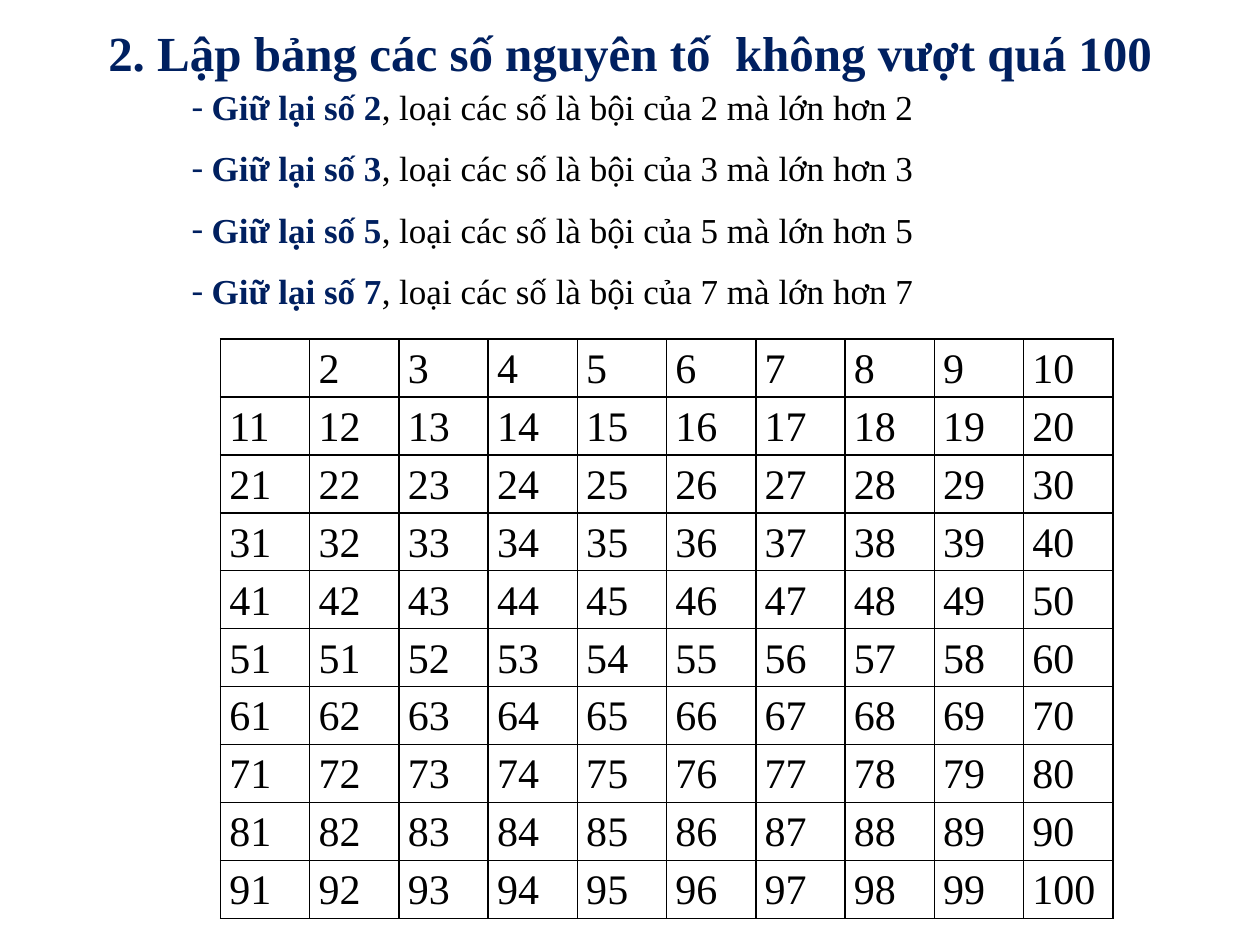
from lxml.etree import SubElement
from pptx import Presentation
from pptx.dml.color import RGBColor
from pptx.enum.text import MSO_ANCHOR, MSO_AUTO_SIZE, PP_ALIGN
from pptx.oxml.ns import qn
from pptx.util import Pt

TITLE = "2. Lập bảng các số nguyên tố  không vượt quá 100"
PRIMES = [2, 3, 5, 7]
NUMBERS = [list(range(start, start + 10)) for start in range(1, 100, 10)]
NUMBERS[0][0] = ""
NUMBERS[5] = [51, *range(51, 59), 60]

FONT = "Times New Roman"
NAVY, BLACK = "002060", "000000"
TABLE_LEFT, TABLE_TOP = 126, 193.7
COLUMN_WIDTH, ROW_HEIGHT = 51, 33.12
BULLET_INDENT = 11.5


def color(value):
    return RGBColor.from_string(value)


def add_text(para, text, size, fill=BLACK, bold=False):
    span = para.add_run()
    span.text = text
    span.font.name = FONT
    span.font.size = Pt(size)
    span.font.bold = bold
    span.font.color.rgb = color(fill)


def place(box, left, top, width, height, anchor):
    box.left, box.top, box.width, box.height = map(Pt, (left, top, width, height))
    frame = box.text_frame
    frame.word_wrap = True
    frame.auto_size = MSO_AUTO_SIZE.NONE
    frame.vertical_anchor = anchor
    return frame


def add_dash(para):
    properties = para._p.get_or_add_pPr()
    properties.set("marL", str(Pt(BULLET_INDENT)))
    properties.set("indent", str(-Pt(BULLET_INDENT)))
    SubElement(properties, qn("a:buFont"), typeface=FONT)
    SubElement(properties, qn("a:buChar"), char="-")


def add_borders(cell):
    """Draw a thin black line on all four sides, before the cell's fill is set."""
    properties = cell._tc.get_or_add_tcPr()
    for side in ("lnL", "lnR", "lnT", "lnB"):
        line = SubElement(properties, qn(f"a:{side}"), w=str(Pt(1)))
        fill = SubElement(line, qn("a:solidFill"))
        SubElement(fill, qn("a:srgbClr"), val=BLACK)


def add_number_table(page):
    rows, columns = len(NUMBERS), len(NUMBERS[0])
    table = page.shapes.add_table(
        rows, columns, Pt(TABLE_LEFT), Pt(TABLE_TOP),
        Pt(columns * COLUMN_WIDTH), Pt(rows * ROW_HEIGHT)).table
    table.first_row = table.horz_banding = False
    for row, numbers in enumerate(NUMBERS):
        for column, number in enumerate(numbers):
            cell = table.cell(row, column)
            cell.margin_left = cell.margin_right = Pt(5.04)
            cell.margin_top = cell.margin_bottom = 0
            add_borders(cell)
            cell.fill.background()
            para = cell.text_frame.paragraphs[0]
            para.line_spacing = 1.15
            if number:
                add_text(para, str(number), size=24)


def main():
    deck = Presentation()
    deck.slide_width, deck.slide_height = Pt(720), Pt(540)
    page = deck.slides.add_slide(deck.slide_layouts[1])
    title, body = page.placeholders

    para = place(title, 18, 5.76, 684, 48.24, MSO_ANCHOR.MIDDLE).paragraphs[0]
    para.alignment = PP_ALIGN.CENTER
    add_text(para, TITLE, size=28, fill=NAVY, bold=True)

    frame = place(body, 102.24, 45.36, 588.24, 140.4, MSO_ANCHOR.TOP)
    for index, prime in enumerate(PRIMES):
        para = frame.add_paragraph() if index else frame.paragraphs[0]
        para.space_before, para.space_after = Pt(0), Pt(11)
        add_dash(para)
        add_text(para, f"Giữ lại số {prime}", size=20, fill=NAVY, bold=True)
        add_text(para, f", loại các số là bội của {prime} mà lớn hơn {prime}", size=20)

    add_number_table(page)
    deck.save("out.pptx")


if __name__ == "__main__":
    main()
